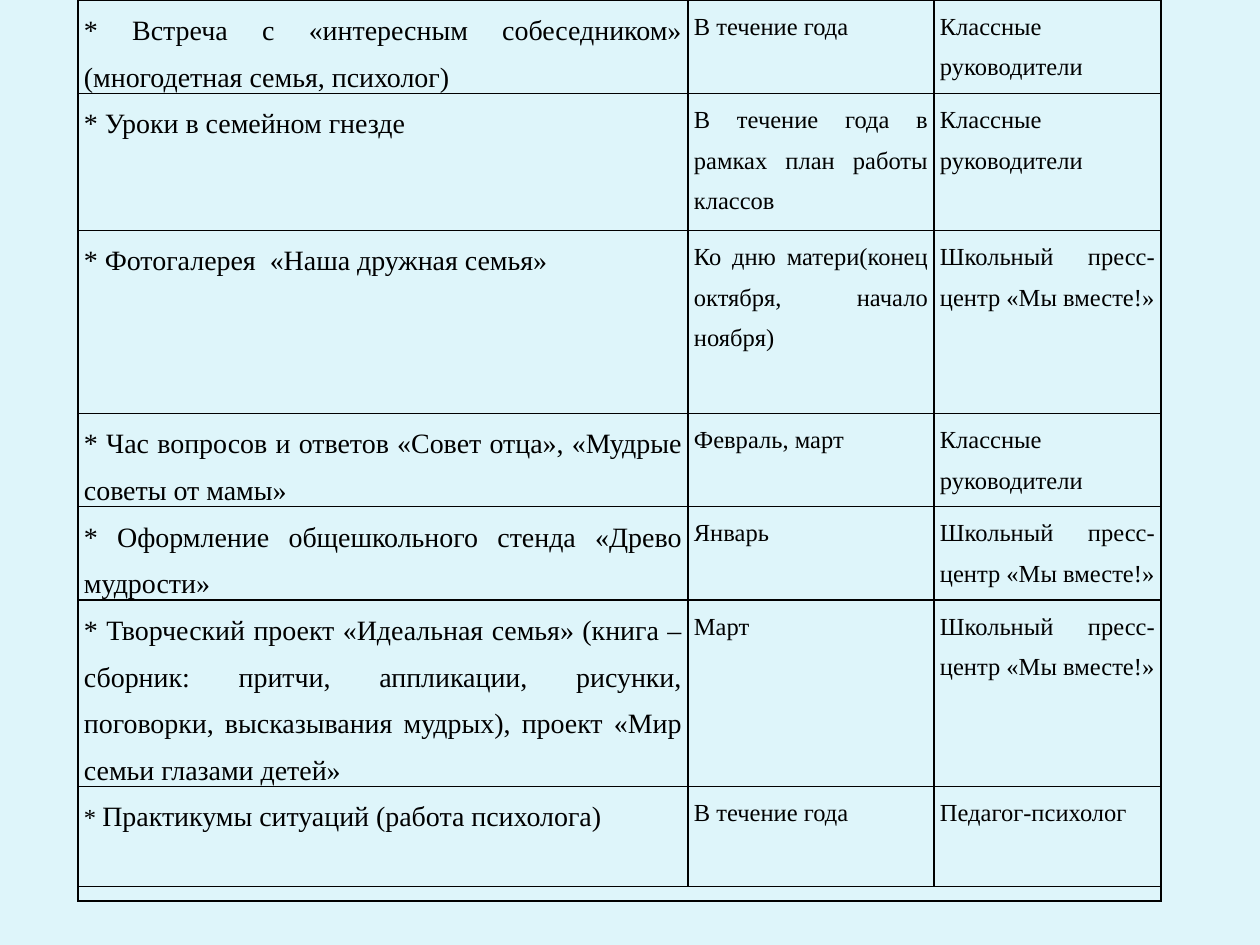
import lxml.etree
import pptx
import pptx.dml.color
import pptx.enum.text
import pptx.oxml.ns
import pptx.util

SCALE = 914400 / 126  # EMU per px
BACK = pptx.dml.color.RGBColor(0xDE, 0xF5, 0xFA)
INK = pptx.dml.color.RGBColor(0, 0, 0)
FONT = "Times New Roman"
BIG, SMALL, TINY = 16, 14, 1
ALIGN = pptx.enum.text.PP_ALIGN

WIDTHS = [610, 246, 227]
HEIGHTS = [58, 137, 183, 92, 92, 137, 100, 0]
YEAR = "В течение года"
HEADS = "Классные руководители"
PRESS = "Школьный пресс-центр «Мы вместе!»"

# Event, time, who is in charge
PLAN = [
    ("* Встреча с «интересным собеседником» (многодетная семья, психолог)",
     YEAR, HEADS),
    ("* Уроки в семейном гнезде",
     "В течение года в рамках план работы классов", HEADS),
    ("* Фотогалерея  «Наша дружная семья»",
     "Ко дню матери(конец октября, начало ноября)", PRESS),
    ("* Час вопросов и ответов «Совет отца», «Мудрые советы от мамы»",
     "Февраль, март", HEADS),
    ("* Оформление общешкольного стенда «Древо мудрости»",
     "Январь", PRESS),
    ("* Творческий проект «Идеальная семья» (книга – сборник: притчи, "
     "аппликации, рисунки, поговорки, высказывания мудрых), "
     "проект «Мир семьи глазами детей»", "Март", PRESS),
    ("* ", YEAR, "Педагог-психолог"),
]
TALKS = "Практикумы ситуаций (работа психолога)"


def px(count):
    return pptx.util.Emu(round(count * SCALE))


def add_node(parent, tag, **attrs):
    return lxml.etree.SubElement(parent, pptx.oxml.ns.qn(tag), **attrs)


def frame(cell):
    """Clear the fill and draw a thin line on all four sides."""
    cell.fill.background()
    props = cell._tc.get_or_add_tcPr()
    for place, side in enumerate("LRTB"):
        line = add_node(props, f"a:ln{side}", w=str(pptx.util.Pt(1)))
        add_node(add_node(line, "a:solidFill"), "a:srgbClr", val=str(INK))
        props.insert(place, line)


def style(run, size):
    run.font.name = FONT
    run.font.size = pptx.util.Pt(size)
    run.font.color.rgb = INK


def write(cell, text, size):
    cell.margin_left = cell.margin_right = px(6)
    cell.margin_top = cell.margin_bottom = 0
    cell.text_frame.text = text
    para = cell.text_frame.paragraphs[0]
    para.alignment = ALIGN.JUSTIFY
    para.line_spacing = 1.5
    for run in para.runs:
        style(run, size)
    return para


def add_grid(slide):
    grid = slide.shapes.add_table(
        len(HEIGHTS), len(WIDTHS), px(78), 0,
        px(sum(WIDTHS)), px(sum(HEIGHTS))).table
    grid.first_row = grid.horz_banding = False
    for col, width in zip(grid.columns, WIDTHS):
        col.width = px(width)
    for row, height in zip(grid.rows, HEIGHTS):
        row.height = px(height)
    for cell in grid.iter_cells():
        frame(cell)
    return grid


def fill_grid(grid):
    for row, texts in enumerate(PLAN):
        for col, text in enumerate(texts):
            size = BIG if col == 0 and text != "* " else SMALL
            para = write(grid.cell(row, col), text, size)

    # The last event has a small star and a left-aligned time
    last = len(PLAN) - 1
    run = grid.cell(last, 0).text_frame.paragraphs[0].add_run()
    run.text = TALKS
    style(run, BIG)
    grid.cell(last, 1).text_frame.paragraphs[0].alignment = ALIGN.LEFT

    # Thin empty strip across the foot
    foot = len(HEIGHTS) - 1
    for col in range(len(WIDTHS)):
        para = grid.cell(foot, col).text_frame.paragraphs[0]
        add_node(para._p, "a:endParaRPr", sz=str(TINY * 100))
    grid.cell(foot, 0).merge(grid.cell(foot, len(WIDTHS) - 1))


def main():
    deck = pptx.Presentation()
    deck.slide_width, deck.slide_height = px(1260), px(945)
    slide = deck.slides.add_slide(deck.slide_layouts[6])
    slide.background.fill.solid()
    slide.background.fill.fore_color.rgb = BACK
    fill_grid(add_grid(slide))
    deck.save("out.pptx")


if __name__ == "__main__":
    main()
